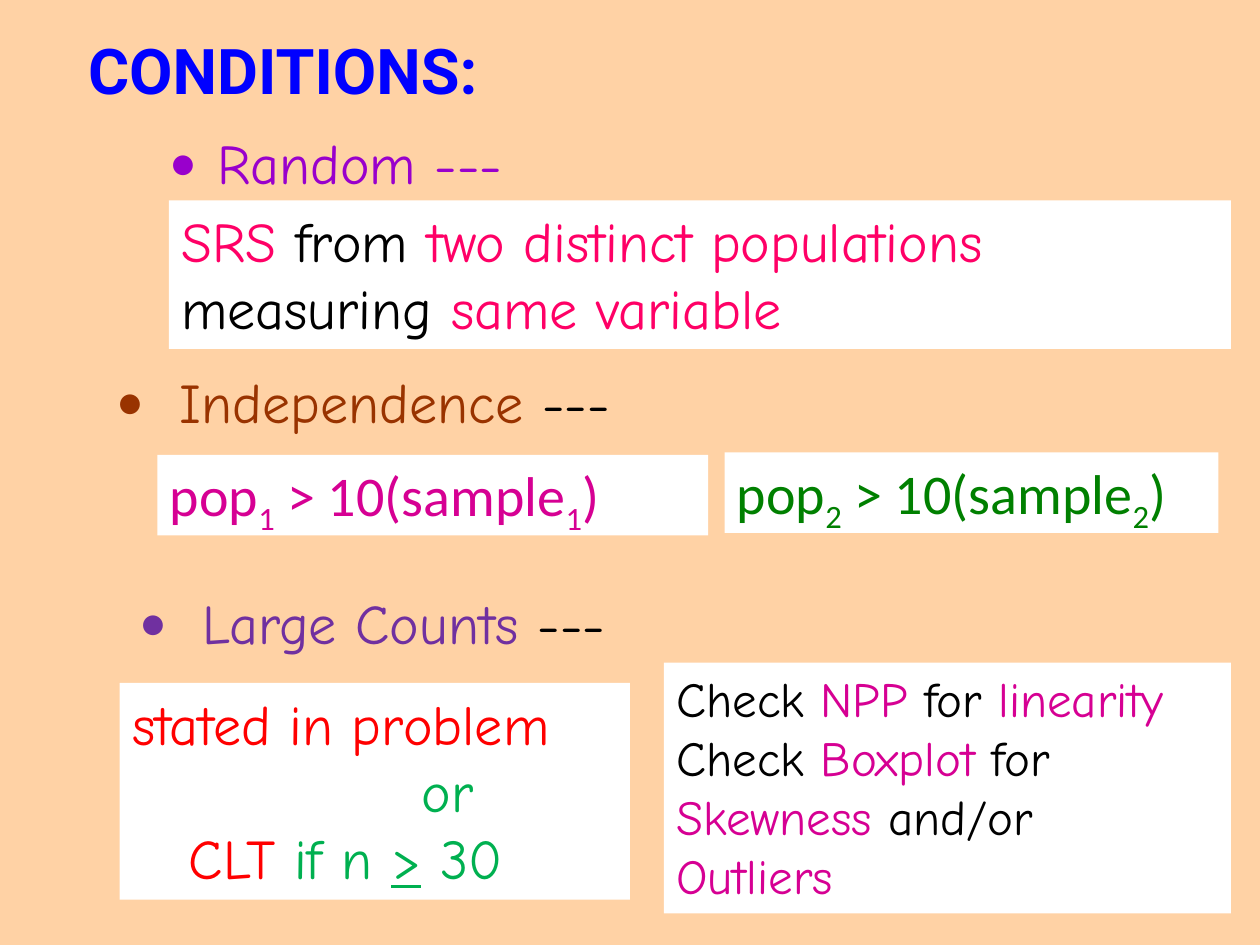
from lxml import etree
from pptx import Presentation
from pptx.dml.color import RGBColor
from pptx.enum import shapes, text
from pptx.oxml.ns import qn
from pptx.util import Inches, Pt

BLACK, WHITE, RED, GREEN = "000000", "FFFFFF", "FF0000", "00B050"
PINK, MAGENTA = "FF0066", "D60093"


def color(hex_code):
    return RGBColor.from_string(hex_code)


class ConditionsPage:
    """Holds the text style and the slide being filled."""

    font = "Comic Neue"
    size = 32

    def __init__(self, deck, background):
        self.page = deck.slides.add_slide(deck.slide_layouts[6])
        self.page.background.fill.solid()
        self.page.background.fill.fore_color.rgb = color(background)

    def add_lines(self, box, lines, font=None, size=None, bold=False):
        """Fill a box with lines, each a list of (words, colour, style) spans."""
        frame = box.text_frame
        frame.word_wrap = True
        frame.vertical_anchor = text.MSO_ANCHOR.TOP
        for number, line in enumerate(lines):
            para = frame.add_paragraph() if number else frame.paragraphs[0]
            para.alignment = text.PP_ALIGN.LEFT
            for words, hex_code, *style in line:
                span = para.add_run()
                span.text = words
                span.font.name = font or self.font
                span.font.size = Pt(size or self.size)
                span.font.bold = bold
                span.font.color.rgb = color(hex_code)
                if "underline" in style:
                    span.font.underline = True
                if "subscript" in style:
                    span._r.get_or_add_rPr().set("baseline", "-25000")

    def label(self, left, top, width, height, line, **style):
        box = self.page.shapes.add_textbox(
            Inches(left), Inches(top), Inches(width), Inches(height))
        self.add_lines(box, [line], **style)
        return box

    def bullet(self, left, top, width, indent, line):
        box = self.label(left, top, width, 0.64, line)
        para = box.text_frame.paragraphs[0]
        self.indent(para, indent, -indent)
        props = para._p.get_or_add_pPr()
        etree.SubElement(props, qn("a:buFont")).set("typeface", "Calibri")
        etree.SubElement(props, qn("a:buChar")).set("char", "•")

    def panel(self, left, top, width, height, lines, **style):
        box = self.page.shapes.add_shape(
            shapes.MSO_SHAPE.RECTANGLE,
            Inches(left), Inches(top), Inches(width), Inches(height))
        box.shadow.inherit = False
        box.fill.solid()
        box.fill.fore_color.rgb = color(WHITE)
        box.line.fill.background()
        self.add_lines(box, lines, **style)
        return box

    def size_rule(self, left, top, width, index, hex_code):
        """Panel stating the 10% rule for one of the populations."""
        line = [("pop", hex_code), (index, hex_code, "subscript"),
                (" > 10(sample", hex_code), (index, hex_code, "subscript"),
                (")", hex_code)]
        self.panel(left, top, width, 0.64, [line], font="Calibri")

    def indent(self, para, margin, first=0):
        props = para._p.get_or_add_pPr()
        props.set("marL", str(Inches(margin)))
        props.set("indent", str(Inches(first)))


def main():
    deck = Presentation()
    deck.slide_width, deck.slide_height = Inches(10), Inches(7.5)
    page = ConditionsPage(deck, "FFD2A5")

    page.label(0.6, 0.2, 3.51, 0.71, [("CONDITIONS:", "0000FF")],
               font="Roboto", size=36, bold=True)

    page.bullet(1.25, 0.97, 5.15, 0.38, [("Random ---", "9900CC")])
    page.bullet(1.01, 4.62, 4.26, 0.5,
                [("Large Counts", "7030A0"), (" ---", BLACK)])

    counts = page.panel(0.95, 5.42, 4.05, 1.72, [
        [("stated in problem", RED)],
        [("or", GREEN)],
        [("CLT ", RED), ("if n ", GREEN), (">", GREEN, "underline"),
         (" 30", GREEN)],
    ])
    for para, margin in zip(counts.text_frame.paragraphs, (0, 2.3, 0.45)):
        page.indent(para, margin)

    page.panel(5.27, 5.26, 4.5, 1.99, [
        [("Check ", BLACK), ("NPP", MAGENTA), (" for ", BLACK),
         ("linearity", MAGENTA)],
        [("Check ", BLACK), ("Boxplot", MAGENTA), (" for", BLACK)],
        [("Skewness", MAGENTA), (" and/or", BLACK)],
        [("Outliers", MAGENTA)],
    ], size=28)

    page.bullet(0.83, 2.87, 4.47, 0.5,
                [("Independence ", "993300"), ("---", BLACK)])
    page.size_rule(1.25, 3.61, 4.37, "1", MAGENTA)
    page.size_rule(5.75, 3.59, 3.92, "2", "008000")

    page.panel(1.34, 1.59, 8.43, 1.18, [
        [("SRS", PINK), (" from ", BLACK), ("two distinct populations", PINK),
         (" measuring ", BLACK), ("same variable", PINK)],
    ])

    deck.save("out.pptx")


if __name__ == "__main__":
    main()
